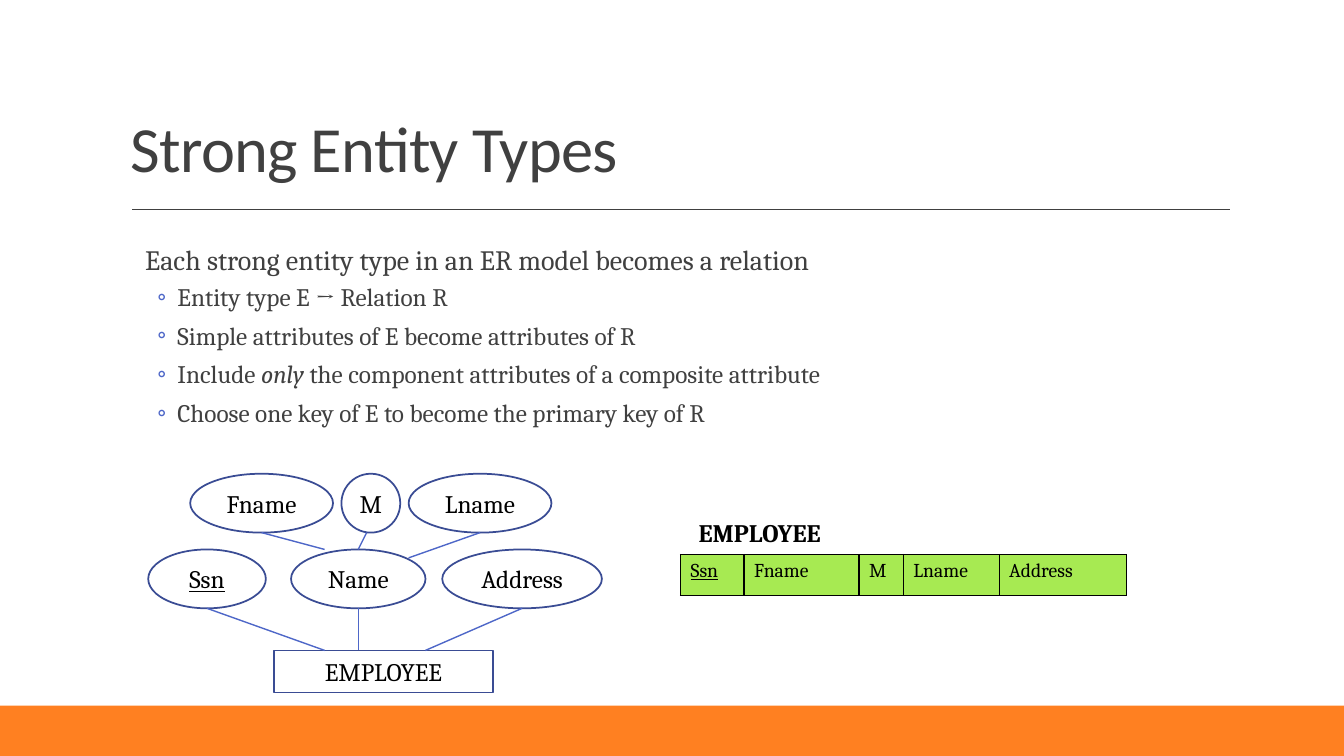
from lxml import etree
from pptx import Presentation
from pptx.dml.color import RGBColor
from pptx.enum.shapes import MSO_CONNECTOR, MSO_SHAPE
from pptx.enum.text import MSO_ANCHOR, PP_ALIGN
from pptx.oxml.ns import qn
from pptx.util import Inches, Pt

STRAIGHT = MSO_CONNECTOR.STRAIGHT
RECTANGLE, OVAL = MSO_SHAPE.RECTANGLE, MSO_SHAPE.OVAL
TOP, MIDDLE, BOTTOM = MSO_ANCHOR.TOP, MSO_ANCHOR.MIDDLE, MSO_ANCHOR.BOTTOM
LEFT, CENTER = PP_ALIGN.LEFT, PP_ALIGN.CENTER

WIDTH, HEIGHT = 13.33, 7.5
COLORS = {"white": "FFFFFF", "band": "FF8021", "body": "404040", "black": "000000",
          "outline": "3A4C94", "link": "4E67C8", "cell": "A7EA52"}

RULES = [
    [("Entity type E → Relation R", False)],
    [("Simple attributes of E become attributes of R", False)],
    [("Include ", False), ("only", True),
     (" the component attributes of a composite attribute", False)],
    [("Choose one key of E to become the primary key of R", False)],
]
DIAGRAM_COLUMNS, DIAGRAM_ROWS = 54, 26
NODES = [
    ("EMPLOYEE", RECTANGLE, 15, 21, 26, 5),
    ("Ssn", OVAL, 0, 9, 14, 7),
    ("Address", OVAL, 35, 9, 19, 7),
    ("Name", OVAL, 17, 9, 16, 7),
    ("Fname", OVAL, 5, 0, 17, 7),
    ("Lname", OVAL, 31, 0, 17, 7),
    ("M", OVAL, 23, 0, 7, 7),
]
LINKS = [
    (7, 16, 21, 21), (25, 16, 25, 21), (44.5, 16, 33, 21),
    (13.5, 7, 21, 9), (26, 7, 25, 9), (39.5, 7, 31, 10),
]
KEY = "Ssn"
RELATION = {KEY: 0.63, "Fname": 1.14, "M": 0.44, "Lname": 0.95, "Address": 1.26}


def rgb(name):
    """Return the named palette colour."""
    return RGBColor.from_string(COLORS[name])


def write(paragraph, text, size=18, font="Cambria", color="black", bold=False,
          italic=False, underline=False, align=LEFT):
    """Add one formatted run to a paragraph and return it."""
    paragraph.alignment = align
    run = paragraph.add_run()
    run.text = text
    run.font.size, run.font.name = Pt(size), font
    run.font.bold, run.font.italic, run.font.underline = bold, italic, underline
    run.font.color.rgb = rgb(color)
    return run


def text_frame(slide, box, anchor=TOP, side=0.1, wrap=True):
    """Add a text box and return its frame."""
    frame = slide.shapes.add_textbox(*map(Inches, box)).text_frame
    frame.word_wrap, frame.vertical_anchor = wrap, anchor
    frame.margin_left = frame.margin_right = Inches(side)
    return frame


def add_block(slide, kind, box, fill, outline=None):
    """Add a filled shape with an optional outline."""
    block = slide.shapes.add_shape(kind, *map(Inches, box))
    block.shadow.inherit = False
    block.fill.solid()
    block.fill.fore_color.rgb = rgb(fill)
    if outline:
        block.line.color.rgb, block.line.width = rgb(outline), Pt(1.25)
    else:
        block.line.fill.background()
    return block


def add_line(slide, ends, color):
    """Add a thin straight line between two points."""
    line = slide.shapes.add_connector(STRAIGHT, *map(Inches, ends))
    line.line.color.rgb, line.line.width = rgb(color), Pt(1)
    etree.SubElement(line._element.spPr, qn("a:effectLst"))


def indent(paragraph, margin, hanging=0, bullet=None):
    """Set the left indent and the bullet of a paragraph."""
    properties = paragraph._p.get_or_add_pPr()
    properties.set("marL", str(Inches(margin)))
    properties.set("indent", str(-Inches(hanging)))
    if bullet:
        color = etree.SubElement(properties, qn("a:buClr"))
        etree.SubElement(color, qn("a:srgbClr"), val=COLORS["link"])
        etree.SubElement(properties, qn("a:buFont"), typeface="Calibri")
        etree.SubElement(properties, qn("a:buChar"), char=bullet)


def add_heading(slide, box):
    """Place the title with the rule below it."""
    left, top, width, height = box
    title = text_frame(slide, box, BOTTOM).paragraphs[0]
    title.line_spacing = 0.9
    run = write(title, "Strong Entity Types", 46, "Calibri", "body")
    run.font._element.set("spc", "-50")
    rule_top = top + height + 0.18
    add_line(slide, (left + 0.11, rule_top, left + width, rule_top), "body")


def add_rules(slide, box):
    """Place the lead sentence and its bulleted rules."""
    frame = text_frame(slide, box, side=0)
    lead = frame.paragraphs[0]
    indent(lead, 0.1)
    lead.line_spacing, lead.space_after = 1.1, Pt(2)
    write(lead, "Each strong entity type in an ER model becomes a relation", 20, color="body")
    for pieces in RULES:
        rule = frame.add_paragraph()
        rule.level = 1
        rule.space_before, rule.space_after = Pt(2), Pt(4)
        indent(rule, 0.42, 0.2, "◦")
        for text, italic in pieces:
            write(rule, text, color="body", italic=italic)


def add_diagram(slide, box):
    """Place the entity with its attributes on the diagram grid."""
    left, top, width, height = box
    column, row = width / DIAGRAM_COLUMNS, height / DIAGRAM_ROWS
    for label, kind, x, y, columns, rows in NODES:
        place = (left + x * column, top + y * row, columns * column, rows * row)
        frame = add_block(slide, kind, place, "white", "outline").text_frame
        frame.vertical_anchor, frame.word_wrap = MIDDLE, False
        write(frame.paragraphs[0], label, underline=label == KEY, align=CENTER)
    for x1, y1, x2, y2 in LINKS:
        add_line(slide, (left + x1 * column, top + y1 * row,
                         left + x2 * column, top + y2 * row), "link")


def border(cell):
    """Draw a thin black border around a cell."""
    properties = cell._tc.get_or_add_tcPr()
    for position, side in enumerate(("lnL", "lnR", "lnT", "lnB")):
        edge = etree.Element(qn(f"a:{side}"), w=str(Pt(1)))
        fill = etree.SubElement(edge, qn("a:solidFill"))
        etree.SubElement(fill, qn("a:srgbClr"), val=COLORS["black"])
        properties.insert(position, edge)


def add_relation(slide, box):
    """Place the relation name above its row of attributes."""
    left, top, width, height = box
    name_height = 0.42
    name = text_frame(slide, (left + 0.08, top, 1.59, 0.4), wrap=False)
    write(name.paragraphs[0], "EMPLOYEE", bold=True)
    place = (left, top + name_height, width, height - name_height)
    table = slide.shapes.add_table(1, len(RELATION), *map(Inches, place)).table
    table.first_row = table.horz_banding = False
    for index, (attribute, share) in enumerate(RELATION.items()):
        table.columns[index].width = Inches(width * share / sum(RELATION.values()))
        cell = table.cell(0, index)
        cell.fill.solid()
        cell.fill.fore_color.rgb = rgb("cell")
        border(cell)
        write(cell.text_frame.paragraphs[0], attribute, 14, underline=attribute == KEY)


def main():
    """Build the slide and save it."""
    deck = Presentation()
    deck.slide_width, deck.slide_height = Inches(WIDTH), Inches(HEIGHT)
    slide = deck.slides.add_slide(deck.slide_layouts[6])
    add_block(slide, RECTANGLE, (0, HEIGHT - 0.5, WIDTH, 0.5), "band")
    add_heading(slide, (1.2, 0.31, 11, 1.59))
    add_rules(slide, (1.34, 2.32, 9.83, 2.77))
    add_diagram(slide, (1.47, 4.7, 4.5, 2.17))
    add_relation(slide, (6.75, 5.08, 4.42, 0.83))
    deck.save("out.pptx")


if __name__ == "__main__":
    main()
